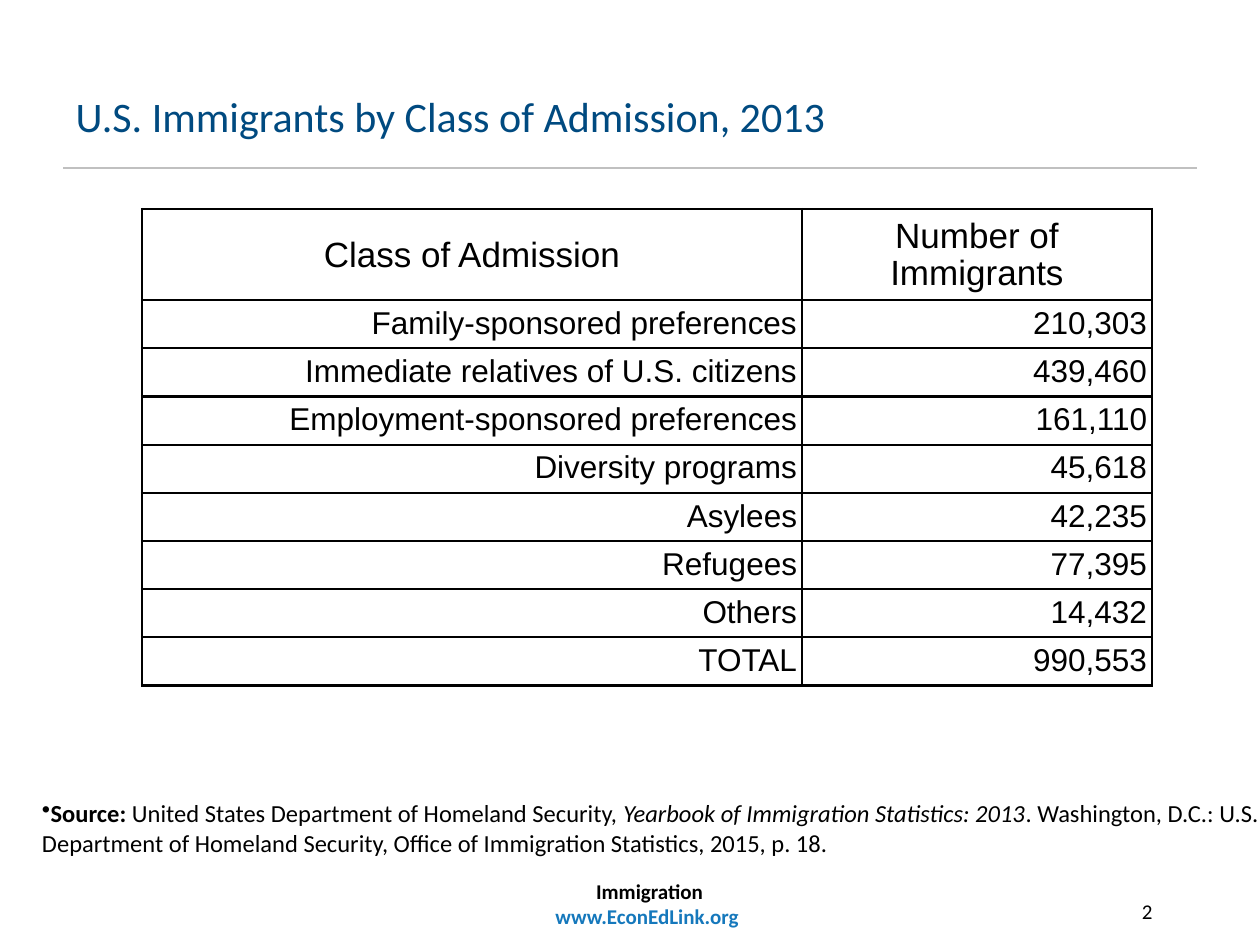
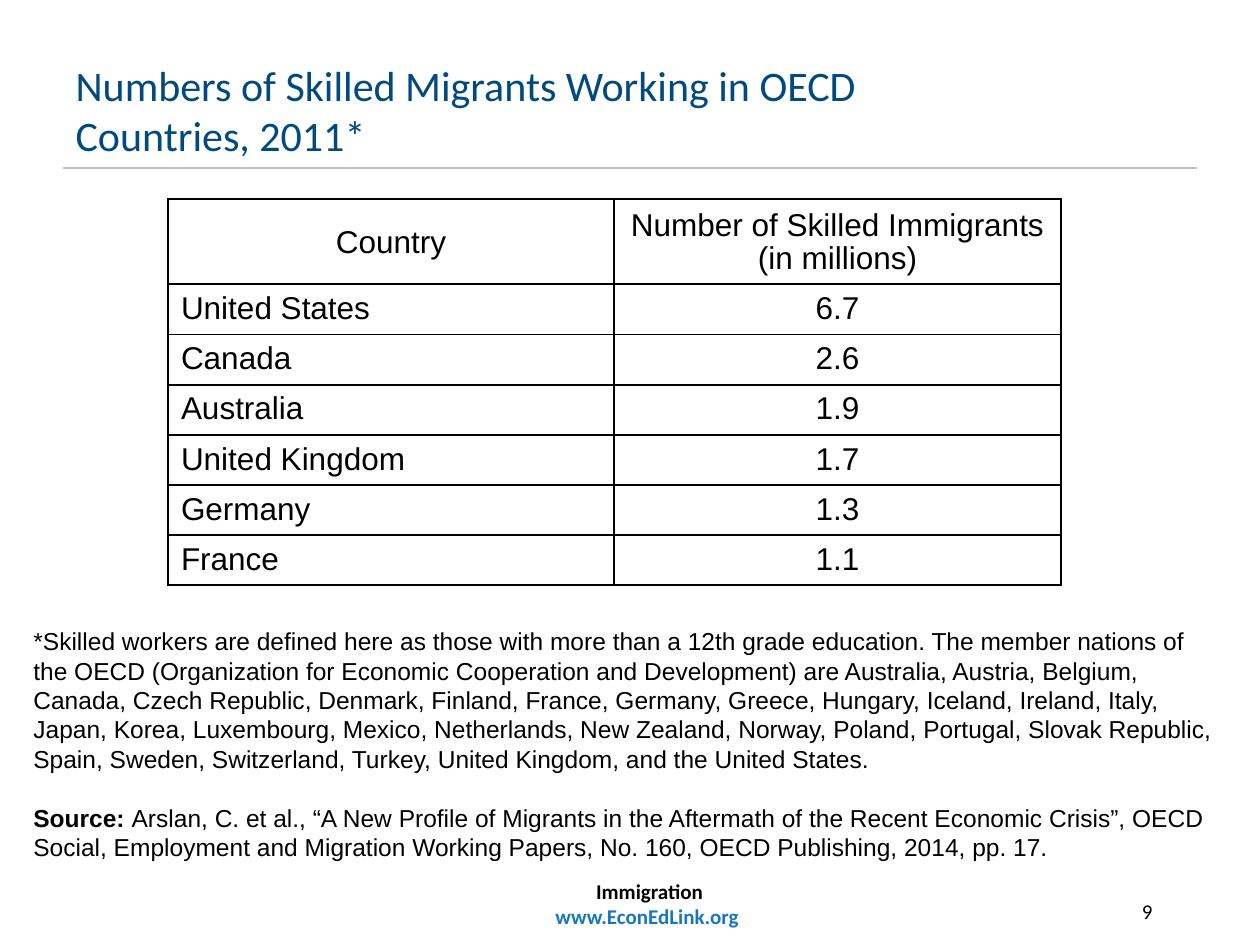
"""Two slides on immigration, each with a table, a source note and a footer."""
from lxml.etree import SubElement
from pptx import Presentation
from pptx.dml.color import RGBColor as RGB
from pptx.enum.shapes import MSO_CONNECTOR as LINK
from pptx.enum.text import MSO_ANCHOR as ANCHOR, MSO_AUTO_SIZE as FIT, PP_ALIGN as ALIGN
from pptx.oxml.ns import qn
from pptx.util import Pt

SCALE = 914400 / 126
HUES = {"title": "004A80", "ink": "000000", "link": "1578BC",
        "rule": "C0C0C0", "paper": "FFFFFF"}
LEFT, MID, RIGHT = ALIGN.LEFT, ALIGN.CENTER, ALIGN.RIGHT


def px(size):
    """Turn px into EMU."""
    return round(size * SCALE)


def hue(name):
    """Give a named colour."""
    return RGB.from_string(HUES[name])


def write(par, text, font="Calibri", size=12, color="ink", bold=False,
          italic=False, align=LEFT, lead=None, before=None):
    """Add text to a paragraph, breaking lines at each newline."""
    par.alignment = align
    if lead:
        par.line_spacing = lead
    if before:
        par.space_before = Pt(before)
    for num, line in enumerate(text.split("\n")):
        if num:
            par.add_line_break()
        run = par.add_run()
        run.text = line
        face = run.font
        face.name, face.size = font, Pt(size)
        face.bold, face.italic = bold, italic
        face.color.rgb = hue(color)


def pad(item, left, top, right, bottom):
    """Set the inner margins of a cell or text frame."""
    item.margin_left, item.margin_top = px(left), px(top)
    item.margin_right, item.margin_bottom = px(right), px(bottom)


def box(slide, *place):
    """Add a wrapping text box and return its frame."""
    frame = slide.shapes.add_textbox(*map(px, place)).text_frame
    frame.word_wrap = True
    return frame


def rule(slide):
    """Draw the line below the title."""
    line = slide.shapes.add_connector(LINK.STRAIGHT, *map(px, (63, 168, 1197, 168)))
    line.line.color.rgb = hue("rule")
    line.line.width = Pt(1.25)
    SubElement(line._element.spPr, qn("a:effectLst"))


def start(deck, title, top, page):
    """Add a slide with its title, rule, footer and page number."""
    slide = deck.slides.add_slide(deck.slide_layouts[5])
    rule(slide)
    head = slide.shapes.title
    head.left, head.top, head.width, head.height = map(px, (63, top, 1134, 84))
    frame = head.text_frame
    frame.auto_size, frame.vertical_anchor = FIT.NONE, ANCHOR.TOP
    write(frame.paragraphs[0], title, size=24, color="title")
    foot = box(slide, 105, 872, 1089, 63)
    write(foot.paragraphs[0], "Immigration", bold=True, align=MID)
    write(foot.add_paragraph(), "www.EconEdLink.org ", color="link", bold=True, align=MID)
    write(box(slide, 903, 892, 262, 63).paragraphs[0], page, align=RIGHT)
    return slide


def edge(cell, width):
    """Draw all four borders of a cell."""
    props = cell._tc.get_or_add_tcPr()
    for side in "LRTB":
        line = SubElement(props, qn("a:ln" + side), w=str(Pt(width)))
        fill = SubElement(line, qn("a:solidFill"))
        SubElement(fill, qn("a:srgbClr"), val=HUES["ink"])


def grid(slide, rows, left, top, cols, tall, high, inset, aligns, size, line):
    """Add a table whose header row is taller than the others."""
    place = left, top, sum(cols), tall + high * (len(rows) - 1)
    table = slide.shapes.add_table(len(rows), len(cols), *map(px, place)).table
    table.first_row = table.horz_banding = False
    for col, width in zip(table.columns, cols):
        col.width = px(width)
    for y, row in enumerate(rows):
        table.rows[y].height = px(high if y else tall)
        for x, text in enumerate(row):
            cell = table.cell(y, x)
            edge(cell, line)
            cell.fill.solid()
            cell.fill.fore_color.rgb = hue("paper")
            cell.vertical_anchor = ANCHOR.TOP if y else ANCHOR.MIDDLE
            pad(cell, *inset)
            write(cell.text_frame.paragraphs[0], text, font="Arial", lead=0.93,
                  size=18 if y else size, align=aligns[x] if y else MID)


def classes(deck):
    """Build the slide on classes of admission."""
    slide = start(deck, "U.S. Immigrants by Class of Admission, 2013", 84, "2")
    note = box(slide, 42, 169, 1250, 688)
    note.vertical_anchor = ANCHOR.BOTTOM
    pad(note, 0, 1, 0, 0)
    par = note.paragraphs[0]
    SubElement(par._p.get_or_add_pPr(), qn("a:buChar"), char="•")
    write(par, "Source:", size=14, bold=True)
    write(par, " United States Department of Homeland Security, ", size=14)
    write(par, "Yearbook of Immigration Statistics: 2013", size=14, italic=True)
    write(par, ". Washington, D.C.: U.S. Department of Homeland Security, "
          "Office of Immigration Statistics, 2015, p. 18.", size=14)
    rows = [("Class of Admission", "Number of Immigrants"),
            ("Family-sponsored preferences", "210,303"),
            ("Immediate relatives of U.S. citizens", "439,460"),
            ("Employment-sponsored preferences", "161,110"),
            ("Diversity programs", "45,618"),
            ("Asylees", "42,235"),
            ("Refugees", "77,395"),
            ("Others", "14,432"),
            ("TOTAL", "990,553")]
    grid(slide, rows, 142, 209, (660, 350), 86, 47, (5, 8, 5, 5),
         (RIGHT, RIGHT), 20, 1.5)


def skilled(deck):
    """Build the slide on skilled migrants."""
    slide = start(deck, "Numbers of Skilled Migrants Working in OECD\nCountries, 2011*",
                  53, "9")
    rows = [("Country", "Number of Skilled Immigrants\n(in millions)"),
            ("United States", "6.7"),
            ("Canada", "2.6"),
            ("Australia", "1.9"),
            ("United Kingdom", "1.7"),
            ("Germany", "1.3"),
            ("France", "1.1")]
    grid(slide, rows, 168, 199, (446, 447), 81, 48, (13, 9, 13, 6),
         (LEFT, MID), 18, 1.13)
    note = box(slide, 21, 620, 1207, 301)
    write(note.paragraphs[0],
          "*Skilled workers are defined here as those with more than a 12th grade "
          "education. The member nations of the OECD (Organization for Economic "
          "Cooperation and Development) are Australia, Austria, Belgium, Canada, "
          "Czech Republic, Denmark, Finland, France, Germany, Greece, Hungary, "
          "Iceland, Ireland, Italy, Japan, Korea, Luxembourg, Mexico, Netherlands, "
          "New Zealand, Norway, Poland, Portugal, Slovak Republic, Spain, Sweden, "
          "Switzerland, Turkey, United Kingdom, and the United States.",
          font="Arial", size=14)
    par = note.add_paragraph()
    write(par, "Source: ", font="Arial", size=14, bold=True, before=17)
    write(par, "Arslan, C. et al., “A New Profile of Migrants in the Aftermath of the "
          "Recent Economic Crisis”, OECD Social, Employment and Migration Working "
          "Papers, No. 160, OECD Publishing, 2014, pp. 17.", font="Arial", size=14)


def main():
    """Build and save the deck."""
    deck = Presentation()
    deck.slide_width, deck.slide_height = px(1260), px(945)
    classes(deck)
    skilled(deck)
    deck.save("out.pptx")


if __name__ == "__main__":
    main()
